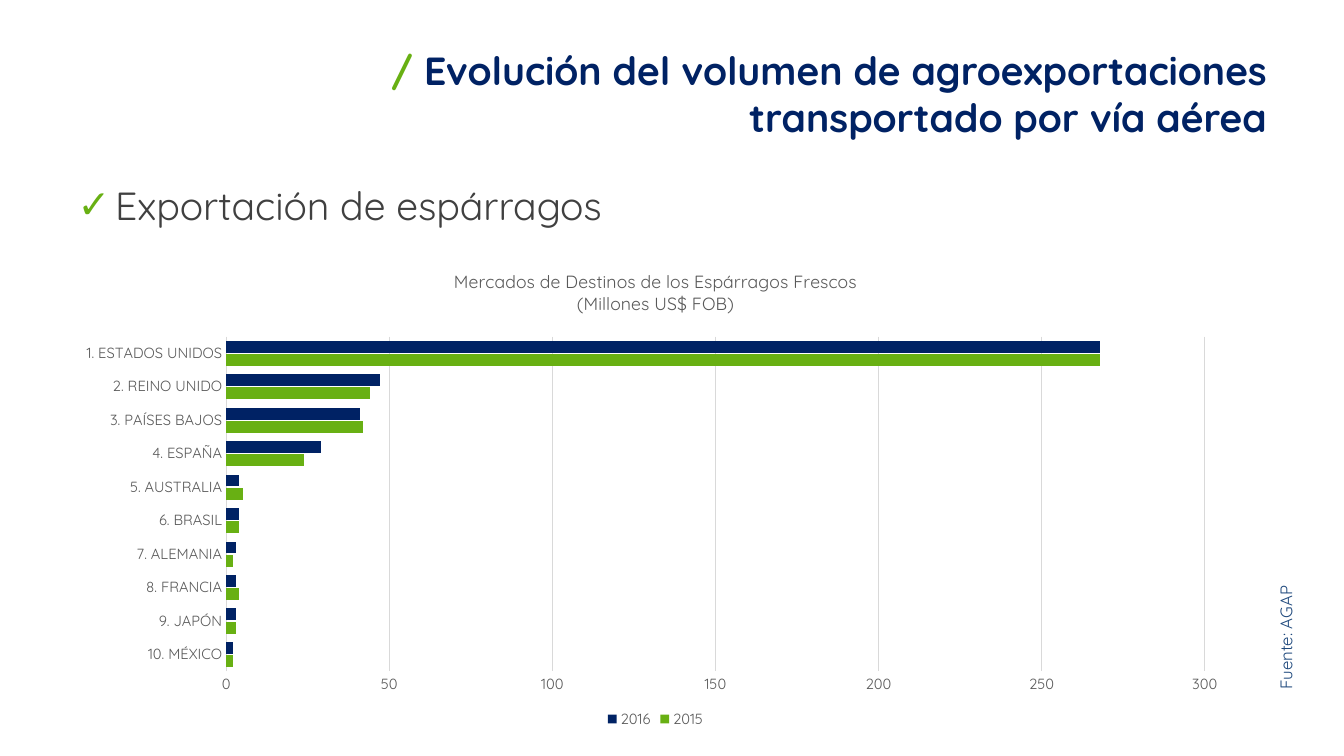
from lxml.etree import SubElement
from pptx import Presentation
from pptx.chart.data import CategoryChartData
from pptx.dml.color import RGBColor
from pptx.enum.chart import XL_CHART_TYPE as ChartType
from pptx.enum.chart import XL_LEGEND_POSITION as LegendPosition
from pptx.enum.chart import XL_TICK_MARK as TickMark
from pptx.enum.text import MSO_ANCHOR as Anchor
from pptx.enum.text import PP_ALIGN as Align
from pptx.oxml.ns import qn
from pptx.util import Cm, Pt

COLORS = {"green": "68B013", "navy": "002264", "text": "404040",
          "source": "1F497D", "label": "595959", "grid": "D9D9D9"}
FONT = "Quicksand"

EXPORTS = [
    ("10. MÉXICO", 2, 2),
    ("9. JAPÓN", 3, 3),
    ("8. FRANCIA", 4, 3),
    ("7. ALEMANIA", 2, 3),
    ("6. BRASIL", 4, 4),
    ("5. AUSTRALIA", 5, 4),
    ("4. ESPAÑA", 24, 29),
    ("3. PAÍSES BAJOS", 42, 41),
    ("2. REINO UNIDO", 44, 47),
    ("1. ESTADOS UNIDOS", 268, 268),
]


def rgb(name):
    """Return the palette colour with this name."""
    return RGBColor.from_string(COLORS[name])


def style(font, size, color, bold=False):
    """Set typeface, size, colour and weight of a font."""
    font.name, font.size, font.bold = FONT, Pt(size), bold
    font.color.rgb = rgb(color)


def place(shape, box):
    """Move a shape to a box given in centimetres."""
    shape.left, shape.top, shape.width, shape.height = map(Cm, box)


def fill_heading(heading, box):
    """Write the right-aligned heading with its green slash."""
    place(heading, box)
    heading.text_frame.vertical_anchor = Anchor.MIDDLE
    paragraph = heading.text_frame.paragraphs[0]
    paragraph.alignment = Align.RIGHT
    style(paragraph.font, 28, "navy", bold=True)
    slash = paragraph.add_run()
    slash.text = "/"
    slash.font.color.rgb = rgb("green")
    paragraph.add_run().text = " Evolución del volumen de agroexportaciones transportado por vía aérea"


def fill_topic(topic, box):
    """Write the topic line with a green check mark as bullet."""
    place(topic, box)
    paragraph = topic.text_frame.paragraphs[0]
    paragraph.text = "Exportación de espárragos"
    properties = paragraph._p.get_or_add_pPr()
    properties.set("marL", str(Cm(0.95)))
    properties.set("indent", str(-Cm(0.95)))
    bullet_color = SubElement(properties, qn("a:buClr"))
    SubElement(bullet_color, qn("a:srgbClr"), val=COLORS["green"])
    SubElement(properties, qn("a:buChar"), char="✓")
    style(paragraph.font, 28, "text")


def add_source(slide, box):
    """Add the source note, turned to read upwards."""
    source = slide.shapes.add_textbox(*map(Cm, box))
    source.rotation = 270
    source.text_frame.word_wrap = True
    paragraph = source.text_frame.paragraphs[0]
    paragraph.text = "Fuente: AGAP"
    paragraph.alignment = Align.RIGHT
    style(paragraph.font, 12, "source")


def set_plot_layout(chart, x, y, w, h):
    """Fix the inner plot area as fractions of the chart."""
    plot_area = chart._chartSpace.chart.plotArea
    for old in plot_area.findall(qn("c:layout")):
        plot_area.remove(old)
    layout = SubElement(plot_area, qn("c:layout"))
    plot_area.insert(0, layout)
    manual = SubElement(layout, qn("c:manualLayout"))
    settings = {"layoutTarget": "inner", "xMode": "edge", "yMode": "edge",
                "x": x, "y": y, "w": w, "h": h}
    for tag, value in settings.items():
        SubElement(manual, qn(f"c:{tag}"), val=str(value))


def style_axes(chart):
    """Format the country axis and the value axis."""
    countries, amounts = chart.category_axis, chart.value_axis
    for axis in (countries, amounts):
        axis.major_tick_mark = axis.minor_tick_mark = TickMark.NONE
        style(axis.tick_labels.font, 10.5, "label")
    amounts.minimum_scale, amounts.maximum_scale, amounts.major_unit = 0, 300, 50
    amounts.tick_labels.number_format = "#,##0"
    amounts.tick_labels.number_format_is_linked = False
    amounts.format.line.fill.background()
    countries.has_major_gridlines = False
    for line in (countries.format.line, amounts.major_gridlines.format.line):
        line.color.rgb = rgb("grid")
        line.width = Pt(0.75)


def add_markets(slide, box):
    """Add the bar chart of asparagus exports by market."""
    countries, exports_2015, exports_2016 = zip(*EXPORTS)
    markets = CategoryChartData(number_format="#,##0")
    markets.categories = countries
    markets.add_series("2015", exports_2015)
    markets.add_series("2016", exports_2016)
    chart = slide.shapes.add_chart(ChartType.BAR_CLUSTERED, *map(Cm, box), markets).chart
    style(chart.font, 10.5, "label")

    caption = chart.chart_title.text_frame
    caption.text = "Mercados de Destinos de los Espárragos Frescos\n(Millones US$ FOB)"
    for paragraph in caption.paragraphs:
        style(paragraph.font, 12.6, "label")

    chart.has_legend = True
    chart.legend.position = LegendPosition.BOTTOM
    chart.legend.include_in_layout = False
    style(chart.legend.font, 10.5, "label")

    bars = chart.plots[0]
    bars.gap_width, bars.overlap, bars.vary_by_categories = 70, -12, False
    for year, color in zip(bars.series, ("green", "navy")):
        year.format.fill.solid()
        year.format.fill.fore_color.rgb = rgb(color)
    style_axes(chart)
    set_plot_layout(chart, 0.135, 0.178, 0.832, 0.695)


def main():
    """Build the slide and save it."""
    deck = Presentation()
    deck.slide_width, deck.slide_height = Cm(33.87), Cm(19.05)
    slide = deck.slides.add_slide(deck.slide_layouts[1])
    fill_heading(slide.shapes.title, (8.94, 0.76, 23.24, 3.18))
    fill_topic(slide.placeholders[1], (1.7, 4.45, 30.48, 1.88))
    add_source(slide, (30.43, 16.1, 3.94, 0.76))
    add_markets(slide, (1.7, 6.32, 29.64, 12.14))
    deck.save("out.pptx")


if __name__ == "__main__":
    main()
